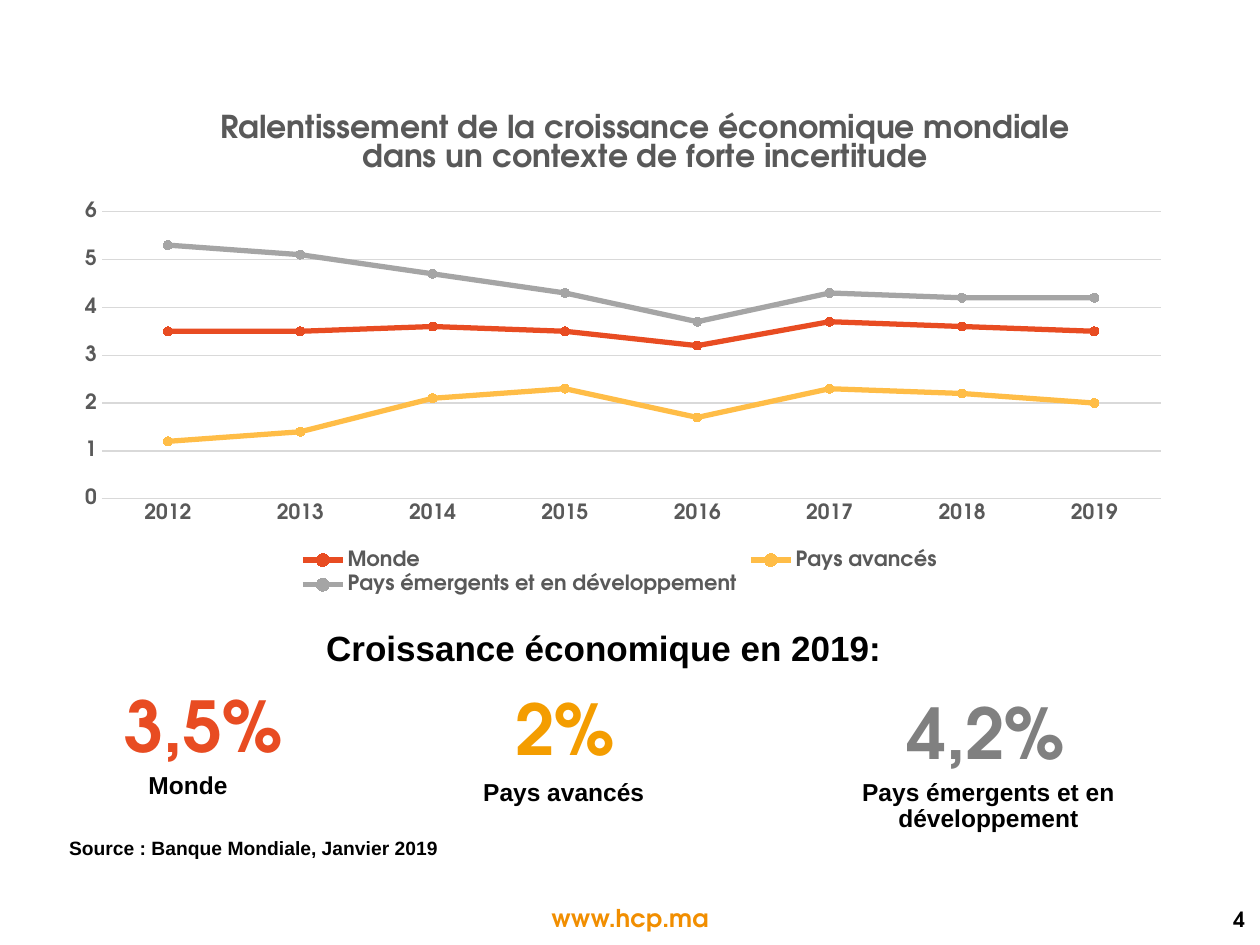
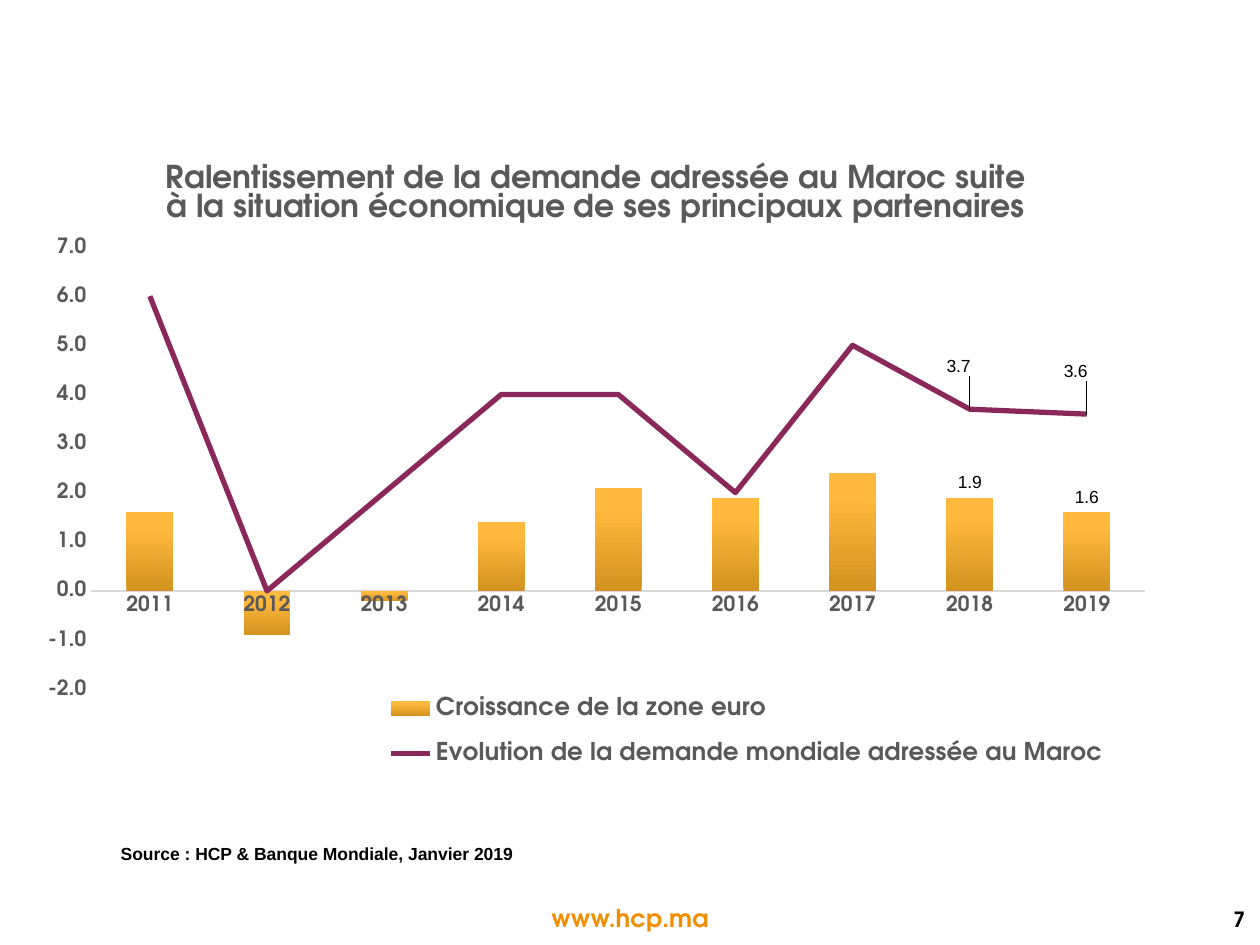
from lxml.etree import SubElement
from pptx import Presentation
from pptx.chart.data import CategoryChartData
from pptx.dml.color import RGBColor
from pptx.enum.chart import (XL_CHART_TYPE, XL_LABEL_POSITION, XL_LEGEND_POSITION,
                             XL_MARKER_STYLE, XL_TICK_MARK)
from pptx.enum.text import MSO_ANCHOR, PP_ALIGN
from pptx.oxml import parse_xml
from pptx.oxml.ns import nsdecls, qn
from pptx.util import Inches, Pt

# Shared style
BRAND, PLAIN = "TeX Gyre Adventor", "Arial"
BLACK, GREY, RULE = "000000", "595959", "D9D9D9"
ORANGE, RED, GOLD, SILVER, PLUM = "F18E00", "E84C22", "FFBD47", "A5A5A5", "8A285B"


def ink(code):
    return RGBColor.from_string(code)


def style(font, size, color=GREY, name=BRAND, bold=True):
    font.size, font.name, font.bold = Pt(size), name, bold
    font.color.rgb = ink(color)


def stroke(line, color, width):
    line.color.rgb = ink(color)
    line.width = Pt(width)


# Text
def add_text(slide, text, box, size, color=BLACK, name=PLAIN,
             align=PP_ALIGN.LEFT, lead=None, anchor=MSO_ANCHOR.TOP):
    frame = slide.shapes.add_textbox(*map(Inches, box)).text_frame
    frame.word_wrap = True
    frame.vertical_anchor = anchor
    para = frame.paragraphs[0]
    para.text, para.alignment = text, align
    if lead:
        para.line_spacing = Pt(lead)
    style(para.font, size, color, name)


def add_page(deck, number):
    slide = deck.slides.add_slide(deck.slide_layouts[6])
    add_text(slide, "www.hcp.ma", (3.82, 7.12, 2.36, 0.33), 14, ORANGE, BRAND,
             PP_ALIGN.CENTER)
    add_text(slide, str(number), (8.46, 7.12, 1.52, 0.35), 12, BLACK, BRAND,
             PP_ALIGN.RIGHT, anchor=MSO_ANCHOR.MIDDLE)
    return slide


# Charts
def place(part, index, edge=True, inner=False, **spots):
    """Give a chart part a manual layout, as fractions of the chart."""
    for old in part.findall(qn("c:layout")):
        part.remove(old)
    layout = parse_xml(f"<c:layout {nsdecls('c')}><c:manualLayout/></c:layout>")
    manual = layout[0]
    if inner:
        SubElement(manual, qn("c:layoutTarget")).set("val", "inner")
    if edge:
        for mode in ("xMode", "yMode"):
            SubElement(manual, qn(f"c:{mode}")).set("val", "edge")
    for key, value in spots.items():
        SubElement(manual, qn(f"c:{key}")).set("val", str(value))
    part.insert(index, layout)


def add_chart(slide, kind, box, title, years, series, span, fmt, key_size, plot):
    data = CategoryChartData(number_format="General")
    data.categories = [str(year) for year in years]
    for name, values in series:
        data.add_series(name, values)
    chart = slide.shapes.add_chart(kind, *map(Inches, box), data).chart
    style(chart.font, 10, BLACK, bold=False)

    chart.has_title = True
    frame = chart.chart_title.text_frame
    frame.text = title
    style(frame.paragraphs[0].font, 18)
    chart.chart_title.include_in_layout = False

    chart.has_legend = True
    chart.legend.position = XL_LEGEND_POSITION.BOTTOM
    chart.legend.include_in_layout = False
    style(chart.legend.font, key_size)

    for axis in (chart.category_axis, chart.value_axis):
        axis.major_tick_mark = axis.minor_tick_mark = XL_TICK_MARK.NONE
        style(axis.tick_labels.font, 12)
    stroke(chart.category_axis.format.line, RULE, 0.75)
    scale = chart.value_axis
    scale.format.line.fill.background()
    scale.minimum_scale, scale.maximum_scale = span
    scale.major_unit = 1
    scale.tick_labels.number_format = fmt
    scale.tick_labels.number_format_is_linked = False

    chart.plots[0].vary_by_categories = False
    area = chart.plots[0]._element.getparent()
    place(area, 0, inner=True, **dict(zip("xywh", plot)))
    return chart


def split_line(chart):
    """Move the last column series to a line plot on the same axes."""
    bars = chart.plots[0]._element
    line = parse_xml(
        f"<c:lineChart {nsdecls('c')}><c:grouping val='standard'/>"
        "<c:varyColors val='0'/></c:lineChart>")
    ser = bars.findall(qn("c:ser"))[-1]
    for flag in ser.findall(qn("c:invertIfNegative")):
        ser.remove(flag)
    line.append(ser)
    SubElement(line, qn("c:marker")).set("val", "1")
    for axis in bars.findall(qn("c:axId")):
        SubElement(line, qn("c:axId")).set("val", axis.get("val"))
    bars.addnext(line)
    return chart.plots[1].series[0]


def label_ends(series, where, shifts):
    series.data_labels.show_value = False
    for index, shift in zip((7, 8), shifts):
        label = series.points[index].data_label
        style(label.font, 10, BLACK, PLAIN, bold=False)
        label.position = where
        if shift:
            item = series._element.find(qn("c:dLbls")).findall(qn("c:dLbl"))[-1]
            place(item, 1, edge=False, x=shift[0], y=shift[1])


# Slides
def world_page(deck):
    slide = add_page(deck, 4)
    chart = add_chart(
        slide, XL_CHART_TYPE.LINE_MARKERS, (0.45, 0.76, 8.94, 4),
        "Ralentissement de la croissance économique mondiale "
        "dans un contexte de forte incertitude",
        range(2012, 2020),
        [("Monde", (3.5, 3.5, 3.6, 3.5, 3.2, 3.7, 3.6, 3.5)),
         ("Pays avancés", (1.2, 1.4, 2.1, 2.3, 1.7, 2.3, 2.2, 2)),
         ("Pays émergents et en développement",
          (5.3, 5.1, 4.7, 4.3, 3.7, 4.3, 4.2, 4.2))],
        (0, 6), "0", 12, (0.04, 0.23, 0.94, 0.57))
    stroke(chart.value_axis.major_gridlines.format.line, RULE, 0.75)
    place(chart.chart_title._element, 1, x=0.14, y=0.02)
    for series, color in zip(chart.plots[0].series, (RED, GOLD, SILVER)):
        series.smooth = False
        stroke(series.format.line, color, 3)
        mark = series.marker
        mark.style, mark.size = XL_MARKER_STYLE.CIRCLE, 5
        mark.format.fill.solid()
        mark.format.fill.fore_color.rgb = ink(color)
        stroke(mark.format.line, color, 0.75)

    # Key figures
    add_text(slide, "Croissance économique en 2019:", (2.49, 5.05, 5.07, 0.32),
             20, lead=15)
    center = PP_ALIGN.CENTER
    for rate, spot, color, name, box, align in (
            ("3,5%", (0.89, 5.37), RED, "Monde", (1.08, 6.09, 1, 0.31), PP_ALIGN.LEFT),
            ("2%", (3.99, 5.39), "F49D00", "Pays avancés",
             (3.11, 6.14, 2.73, 0.32), center),
            ("4,2%", (7.1, 5.42), "808080", "Pays émergents et en développement",
             (6.48, 6.14, 2.73, 0.52), center)):
        add_text(slide, rate, (*spot, 1.79, 0.77), 40, color, BRAND)
        add_text(slide, name, box, 14, align=align, lead=15)
    add_text(slide, "Source : Banque Mondiale, Janvier 2019", (0.45, 6.59, 5, 0.29), 11)


def demand_page(deck):
    slide = add_page(deck, 7)
    add_text(slide, "Source : HCP & Banque Mondiale, Janvier 2019",
             (0.86, 6.64, 3.67, 0.27), 10)
    chart = add_chart(
        slide, XL_CHART_TYPE.COLUMN_CLUSTERED, (0.28, 1.07, 8.9, 5.57),
        "Ralentissement de la demande adressée au Maroc suite "
        "à la situation économique de ses principaux partenaires",
        range(2011, 2020),
        [("Croissance de la zone euro",
          (1.6, -0.9, -0.2, 1.4, 2.1, 1.9, 2.4, 1.9, 1.6)),
         ("Evolution de la demande mondiale adressée au Maroc",
          (6, 0, 2, 4, 4, 2, 5, 3.7, 3.6))],
        (-2, 7), "0.0", 14, (0.05, 0.16, 0.94, 0.63))
    chart.value_axis.has_major_gridlines = False
    place(chart.legend._element, 1, x=0.31, y=0.77, w=0.65, h=0.16)

    # Demand line over euro area columns
    demand = split_line(chart)
    demand.smooth = False
    demand.marker.style = XL_MARKER_STYLE.NONE
    stroke(demand.format.line, PLUM, 3)
    label_ends(demand, XL_LABEL_POSITION.ABOVE, ((-0.01, -0.04), (-0.01, -0.04)))

    chart.plots[0].gap_width = 150
    euro = chart.plots[0].series[0]
    euro.invert_if_negative = False
    fill = euro.format.fill
    fill.gradient()
    fill.gradient_angle = 90
    for stop, color, spot in zip(fill.gradient_stops, ("D39320", "FFB93D"), (0, 0.8)):
        stop.color.rgb = ink(color)
        stop.position = spot
    label_ends(euro, XL_LABEL_POSITION.OUTSIDE_END, (None, None))


def main():
    deck = Presentation()
    deck.slide_width, deck.slide_height = Inches(10), Inches(7.5)
    world_page(deck)
    demand_page(deck)
    deck.save("out.pptx")


if __name__ == "__main__":
    main()
